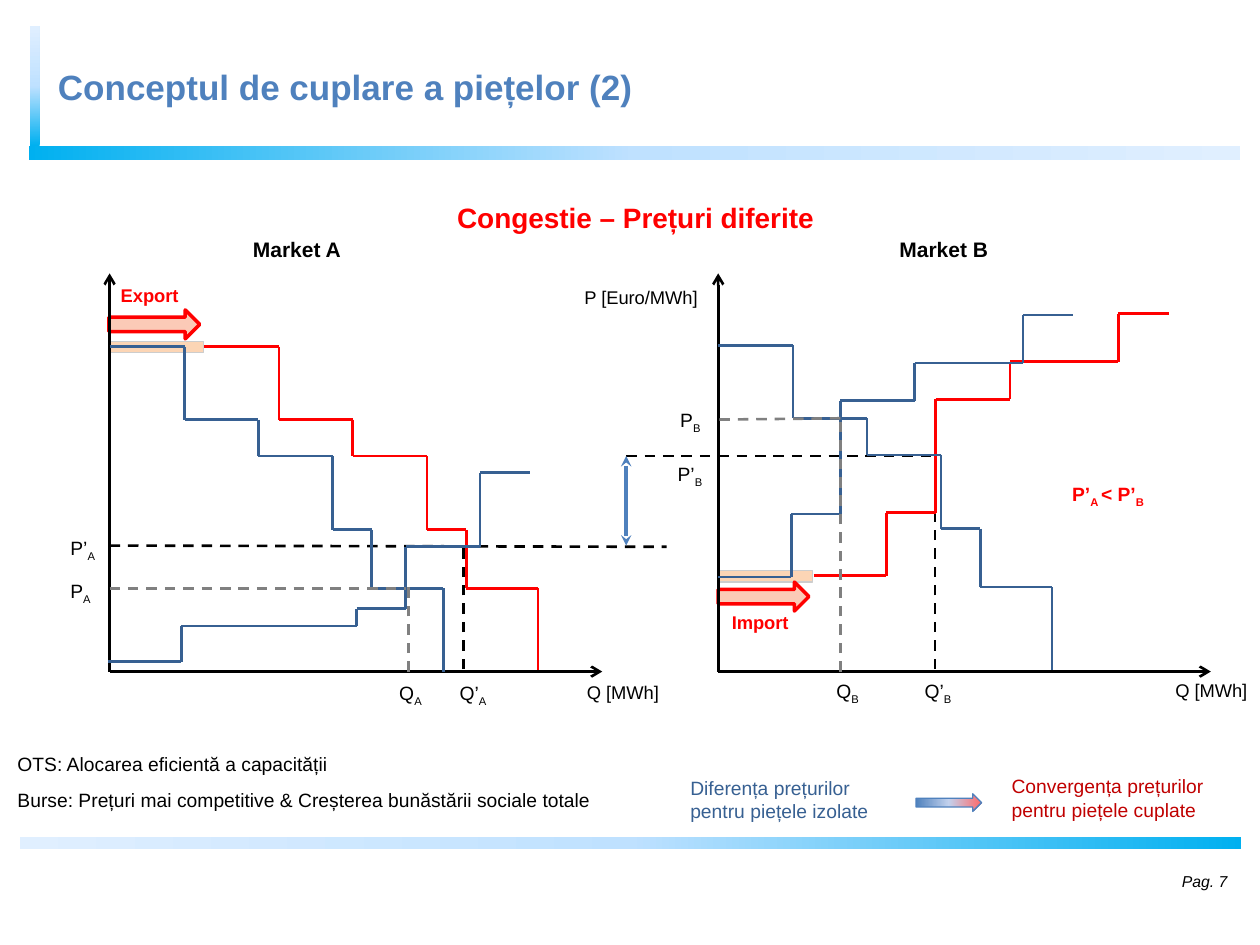
from copy import deepcopy

from lxml import etree
from pptx import Presentation
from pptx.dml.color import RGBColor
from pptx.enum.dml import MSO_LINE
from pptx.enum.shapes import MSO_CONNECTOR, MSO_SHAPE
from pptx.enum.text import MSO_ANCHOR, MSO_AUTO_SIZE, PP_ALIGN
from pptx.oxml.ns import qn
from pptx.util import Inches, Pt

STRAIGHT = MSO_CONNECTOR.STRAIGHT
RECTANGLE, RIGHT_ARROW = MSO_SHAPE.RECTANGLE, MSO_SHAPE.RIGHT_ARROW
DASH = MSO_LINE.DASH
LEFT, RIGHT = PP_ALIGN.LEFT, PP_ALIGN.RIGHT
TOP, MIDDLE = MSO_ANCHOR.TOP, MSO_ANCHOR.MIDDLE
NO_AUTOFIT = MSO_AUTO_SIZE.NONE

BLACK, GREY, WHITE = "000000", "808080", "FFFFFF"
RED, DARK_RED, NAVY, BLUE = "FF0000", "C00000", "376092", "4F81BD"
BAR_COLOURS = ["00B0F0", "BFE1FF", "E0EFFF"]


def colour(hex_string):
    return RGBColor.from_string(hex_string)


def shifted(points, across, down=0):
    return [(x + across, y + down) for x, y in points]


class Canvas:
    """Style and current slide; the grid has 100 columns and 75 rows."""
    font_name = "Arial"
    line_width = 1.5

    def __init__(self, presentation):
        self.column = presentation.slide_width / 100
        self.row = presentation.slide_height / 75
        self.slide = presentation.slides.add_slide(presentation.slide_layouts[5])

    def place(self, left, top, width, height):
        return (round(left * self.column), round(top * self.row),
                round(width * self.column), round(height * self.row))

    def format_runs(self, paragraph, size, hex_string, bold=False, italic=False):
        for run in paragraph.runs:
            font = run.font
            font.name, font.size = self.font_name, Pt(size)
            font.bold, font.italic = bold, italic
            font.color.rgb = colour(hex_string)

    def title(self, text, box):
        shape = self.slide.shapes.title
        shape.left, shape.top, shape.width, shape.height = self.place(*box)
        shape.fill.solid()
        shape.fill.fore_color.rgb = colour(WHITE)
        frame = shape.text_frame
        frame.text = text
        frame.auto_size, frame.vertical_anchor = NO_AUTOFIT, MIDDLE
        frame.paragraphs[0].alignment = LEFT
        self.format_runs(frame.paragraphs[0], 20, BLUE, bold=True)

    def text(self, text, box, size=11, hex_string=BLACK, bold=False,
             italic=False, alignment=LEFT, anchor=TOP):
        """Write one paragraph a line; underscores enclose subscripts."""
        frame = self.slide.shapes.add_textbox(*self.place(*box)).text_frame
        frame.word_wrap, frame.vertical_anchor = False, anchor
        for number, line in enumerate(text.split("\n")):
            paragraph = frame.add_paragraph() if number else frame.paragraphs[0]
            paragraph.alignment = alignment
            for part, words in enumerate(line.split("_")):
                if words:
                    run = paragraph.add_run()
                    run.text = words
                    if part % 2:
                        run._r.get_or_add_rPr().set("baseline", "-25000")
            self.format_runs(paragraph, size, hex_string, bold, italic)

    def shape(self, kind, box, fill, outline=None, width=0.75, rotation=0):
        """Fill with one colour, or with a gradient if given a list."""
        shape = self.slide.shapes.add_shape(kind, *self.place(*box))
        shape.shadow.inherit = False
        shape.rotation = rotation
        if isinstance(fill, list):
            shape.fill.gradient()
            shape.fill.gradient_angle = 0
            stops = shape._element.spPr.find(".//" + qn("a:gsLst"))
            stops.insert(1, deepcopy(stops[0]))
            for number, stop in enumerate(shape.fill.gradient_stops):
                stop.position = number / 2
                stop.color.rgb = colour(fill[number])
        else:
            shape.fill.solid()
            shape.fill.fore_color.rgb = colour(fill)
        if outline:
            shape.line.color.rgb = colour(outline)
            shape.line.width = Pt(width)
        else:
            shape.line.fill.background()

    def line(self, start, end, hex_string, width=line_width, dash=None,
             head=None, tail=None):
        x1, y1, x2, y2 = self.place(*start, *end)
        connector = self.slide.shapes.add_connector(STRAIGHT, x1, y1, x2, y2)
        connector.line.color.rgb = colour(hex_string)
        connector.line.width = Pt(width)
        if dash:
            connector.line.dash_style = dash
        outline = connector.line._get_or_add_ln()
        for tag, arrowhead in (("a:headEnd", head), ("a:tailEnd", tail)):
            if arrowhead:
                etree.SubElement(outline, qn(tag)).set("type", arrowhead)
        etree.SubElement(connector._element.spPr, qn("a:effectLst"))

    def steps(self, points, hex_string):
        for start, end in zip(points, points[1:]):
            self.line(start, end, hex_string)


# Step curves of the isolated markets
DEMAND_A = [(8.7, 27.5), (14.65, 27.5), (14.65, 33.3), (20.5, 33.3), (20.5, 36.2),
            (26.4, 36.2), (26.4, 42.05), (29.5, 42.05), (29.5, 46.7), (35.2, 46.7),
            (35.2, 53.3)]
SUPPLY_A = [(8.6, 52.5), (14.4, 52.5), (14.4, 49.7), (28.3, 49.7), (28.3, 48.3),
            (32.2, 48.3), (32.2, 43.4), (38.1, 43.4), (38.1, 37.5), (42.1, 37.5)]
SUPPLY_B = [(57, 45.8), (62.8, 45.8), (62.8, 40.8), (66.7, 40.8), (66.7, 31.8),
            (72.6, 31.8), (72.6, 28.8), (81.2, 28.8), (81.2, 25), (85.2, 25)]
AXIS_ROW, AXIS_TOP = 53.3, 21.7


def main():
    presentation = Presentation()
    presentation.slide_width, presentation.slide_height = Inches(10), Inches(7.5)
    canvas = Canvas(presentation)

    # Frame bars, title and page number
    canvas.shape(RECTANGLE, (2.3, 11.6, 96.1, 1.1), BAR_COLOURS)
    canvas.shape(RECTANGLE, (-2, 6.4, 9.5, 0.8), BAR_COLOURS, rotation=270)
    canvas.shape(RECTANGLE, (1.6, 66.4, 96.9, 1), BAR_COLOURS[::-1])
    canvas.title("Conceptul de cuplare a piețelor (2)", (3.6, 4.2, 96.7, 5.4))
    canvas.text("Pag. 7", (87.5, 67.9, 10.9, 4), 9, italic=True,
                alignment=RIGHT, anchor=MIDDLE)

    # Exchanged volumes and coupled curves
    for left, band_top, arrow_top in ((8.65, 27.1, 24.6), (57, 45.3, 46.2)):
        canvas.shape(RECTANGLE, (left, band_top, 7.5, 0.9), "FCD5B5", "CDCDCD")
        canvas.shape(RIGHT_ARROW, (left, arrow_top, 7.2, 2.3), "FBCAB7", RED, 2)
    canvas.steps([(16.2, 27.5)] + shifted(DEMAND_A, 7.5)[1:], RED)

    # Coupled prices and quantities
    for start, end in (((36.8, 53.1), (36.8, 43.4)), ((49.7, 36.2), (74.3, 36.2)),
                       ((74.2, 53.1), (74.2, 36.1)), ((8.7, 43.3), (52.9, 43.4))):
        canvas.line(start, end, BLACK, dash=DASH)
    canvas.steps([(64.6, 45.7)] + shifted(SUPPLY_B, 7.55, -0.1)[1:], RED)
    canvas.line((49.7, 36.2), (49.7, 43.3), BLUE, 2, head="stealth", tail="stealth")

    # Axes
    for left in (8.7, 57):
        origin = (left, AXIS_ROW)
        for end in ((left + 39.1, AXIS_ROW), (left, AXIS_TOP)):
            canvas.line(origin, end, BLACK, tail="arrow")

    # Isolated curves, prices and quantities
    for curve in (DEMAND_A, shifted(DEMAND_A, 48.3, -0.1), SUPPLY_A, SUPPLY_B):
        canvas.steps(curve, NAVY)
    for start, end in (((8.7, 46.7), (32.2, 46.7)), ((57.1, 33.3), (66.7, 33.2)),
                       ((32.4, 53.3), (32.4, 46.6)), ((66.7, 53.3), (66.7, 33.3))):
        canvas.line(start, end, GREY, dash=DASH)

    # Price and quantity labels
    for text, left, top, width in (
            ("P’_A", 4.6, 42.1, 4.1), ("P’_B", 52.8, 36.2, 4.1),
            ("Q’_A", 35.5, 53.6, 4.3), ("Q’_B", 72.4, 53.4, 4.3),
            ("P_A", 4.6, 45.5, 3.7), ("P_B", 53, 31.9, 3.7),
            ("Q_A", 30.7, 53.6, 3.9), ("Q_B", 65.4, 53.4, 3.9)):
        canvas.text(text, (left, top, width, 2.9))
    for text, left, top, width in (("Q [MWh]", 45.6, 53.6, 8.1),
                                   ("Q [MWh]", 92.3, 53.4, 8.1),
                                   ("P [Euro/MWh]", 45.4, 22.2, 11.6)):
        canvas.text(text, (left, top, width, 2.9), 10.5)

    # Headings and flow labels
    canvas.text("Congestie – Prețuri diferite", (35.3, 15.4, 30.7, 3.7), 16, RED, True)
    canvas.text("Market A", (19.1, 18.3, 9, 3), 12, bold=True)
    canvas.text("Market B", (70.4, 18.3, 9.1, 3), 12, bold=True)
    canvas.text("Export", (8.6, 22.1, 6.9, 2.9), 10.5, RED, True)
    canvas.text("Import", (57.1, 48, 6.6, 2.8), 10.5, RED, True)
    canvas.text("P’_A _< P’_B", (84.1, 37.8, 8.1, 2.9), 11, RED, True)

    # Conclusions and legend
    canvas.text("OTS: Alocarea eficientă a capacității", (0.4, 59.2, 26.9, 2.9))
    canvas.text("Burse: Prețuri mai competitive & Creșterea bunăstării sociale totale",
                (0.4, 62.1, 47.8, 2.9))
    canvas.text("Diferența prețurilor\npentru piețele izolate",
                (53.8, 61.1, 16.2, 4.7), hex_string=NAVY)
    canvas.text("Convergența prețurilor\npentru piețele cuplate",
                (79.3, 61, 17.8, 4.7), hex_string=DARK_RED)
    canvas.shape(RIGHT_ARROW, (72.7, 63, 5.2, 1.4), [BLUE, "C2D1ED", "FF6969"], BLUE)

    presentation.save("out.pptx")


if __name__ == "__main__":
    main()
